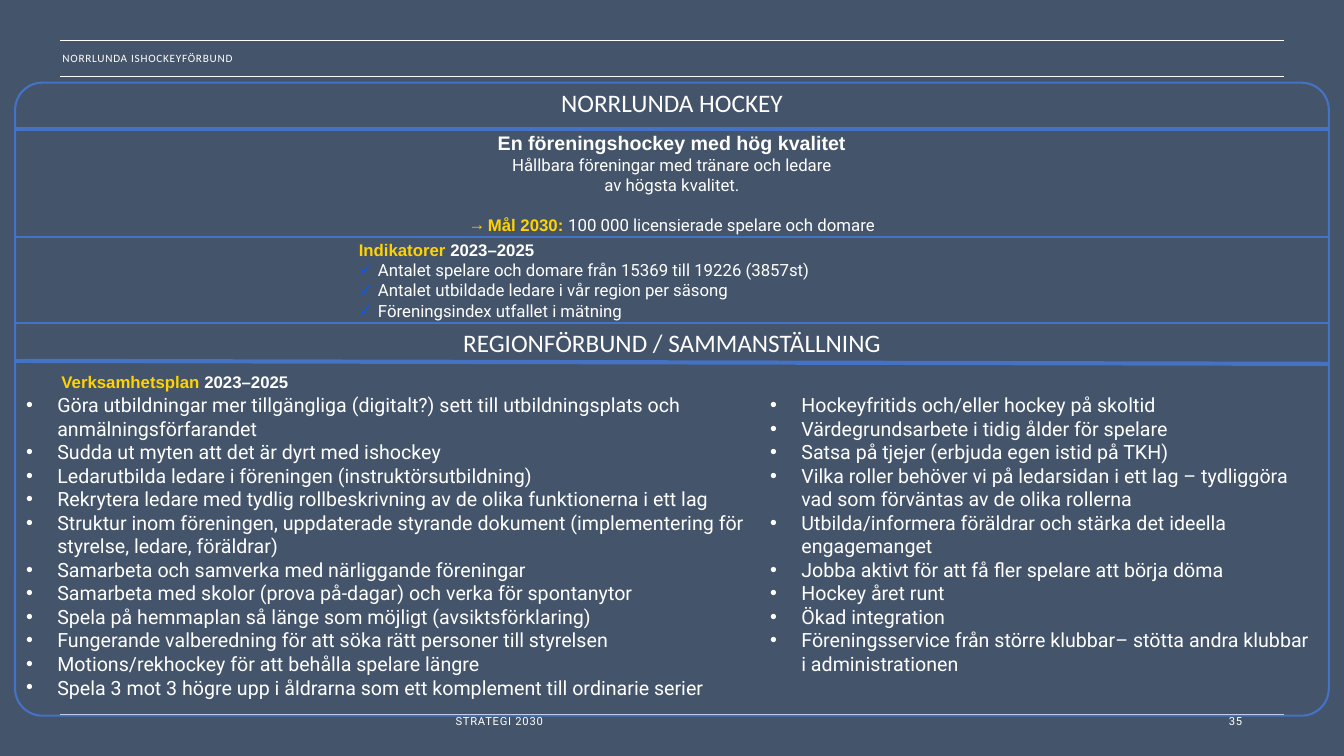
from dataclasses import dataclass

from lxml.etree import SubElement
from pptx import Presentation
from pptx.dml.color import RGBColor
from pptx.enum.shapes import MSO_CONNECTOR, MSO_SHAPE
from pptx.enum.text import MSO_ANCHOR, MSO_AUTO_SIZE, PP_ALIGN
from pptx.oxml.ns import qn
from pptx.slide import Slide
from pptx.util import Inches, Pt

COLORS = {
    "background": "44546A",
    "text": "FFFFFF",
    "frame": "4472C4",
    "accent": "FFD200",
    "check": "0F59EB",
}


@dataclass(frozen=True)
class Rule:
    start: tuple[float, float]
    end: tuple[float, float]
    color: str
    width: float


@dataclass(frozen=True)
class Span:
    text: str
    size: float = 12
    font: str = "Roboto"
    color: str = "text"
    bold: bool = False
    spacing: float = 0


@dataclass(frozen=True)
class Para:
    spans: tuple[Span, ...]
    align: PP_ALIGN = PP_ALIGN.LEFT
    bullet: str = ""
    bullet_color: str = ""
    indent: float = 0
    before: float = 0


MASTER_RULES = [Rule((0.6, y), (12.73, y), "text", 1) for y in (0.76, 0.4, 7.09)]
SECTION_RULES = [
    Rule((13.19, 3.61), (0.16, 3.58), "frame", 3),
    Rule((13.18, 1.28), (0.15, 1.28), "frame", 3),
    Rule((13.19, 3.2), (0.16, 3.2), "frame", 1.5),
    Rule((13.18, 2.35), (0.15, 2.35), "frame", 1.5),
]
INDICATORS = [
    "Antalet spelare och domare från 15369 till 19226 (3857st)",
    "Antalet utbildade ledare i vår region per säsong",
    "Föreningsindex utfallet i mätning",
]
PLAN_LEFT = [
    "Göra utbildningar mer tillgängliga (digitalt?) sett till utbildningsplats och anmälningsförfarandet",
    "Sudda ut myten att det är dyrt med ishockey",
    "Ledarutbilda ledare i föreningen (instruktörsutbildning)",
    "Rekrytera ledare med tydlig rollbeskrivning av de olika funktionerna i ett lag",
    "Struktur inom föreningen, uppdaterade styrande dokument (implementering för styrelse, ledare, föräldrar)",
    "Samarbeta och samverka med närliggande föreningar",
    "Samarbeta med skolor (prova på-dagar) och verka för spontanytor",
    "Spela på hemmaplan så länge som möjligt (avsiktsförklaring)",
    "Fungerande valberedning för att söka rätt personer till styrelsen",
    "Motions/rekhockey för att behålla spelare längre",
    "Spela 3 mot 3 högre upp i åldrarna som ett komplement till ordinarie serier",
]
PLAN_RIGHT = [
    "Hockeyfritids och/eller hockey på skoltid",
    "Värdegrundsarbete i tidig ålder för spelare",
    "Satsa på tjejer (erbjuda egen istid på TKH)",
    "Vilka roller behöver vi på ledarsidan i ett lag – tydliggöra vad som förväntas av de olika rollerna",
    "Utbilda/informera föräldrar och stärka det ideella engagemanget",
    "Jobba aktivt för att få fler spelare att börja döma",
    "Hockey året runt",
    "Ökad integration",
    "Föreningsservice från större klubbar– stötta andra klubbar i administrationen",
]


def rgb(name: str) -> RGBColor:
    return RGBColor.from_string(COLORS[name])


def draw_rule(slide: Slide, rule: Rule) -> None:
    ends = [Inches(value) for value in (*rule.start, *rule.end)]
    line = slide.shapes.add_connector(MSO_CONNECTOR.STRAIGHT, *ends)
    line.line.color.rgb = rgb(rule.color)
    line.line.width = Pt(rule.width)
    SubElement(line._element.spPr, qn("a:effectLst"))


def draw_frame(slide: Slide) -> None:
    box = [Inches(value) for value in (0.15, 0.82, 13.03, 6.28)]
    frame = slide.shapes.add_shape(MSO_SHAPE.ROUNDED_RECTANGLE, *box)
    frame.adjustments[0] = 0.043
    frame.shadow.inherit = False
    frame.fill.background()
    frame.line.color.rgb = rgb("frame")
    frame.line.width = Pt(1.5)


def fill_paragraph(paragraph, content: Para) -> None:
    paragraph.alignment = content.align
    paragraph.space_before = Pt(content.before)
    if content.bullet:
        props = paragraph._p.get_or_add_pPr()
        props.set("marL", str(Inches(content.indent)))
        props.set("indent", str(-Inches(content.indent)))
        if content.bullet_color:
            fill = SubElement(props, qn("a:buClr"))
            SubElement(fill, qn("a:srgbClr"), val=COLORS[content.bullet_color])
        SubElement(props, qn("a:buFont"), typeface="Arial")
        SubElement(props, qn("a:buChar"), char=content.bullet)
    for span in content.spans:
        for number, line in enumerate(span.text.split("\n")):
            if number:
                paragraph.add_line_break()
            run = paragraph.add_run()
            run.text = line
            run.font.size = Pt(span.size)
            run.font.name = span.font
            run.font.bold = span.bold
            run.font.color.rgb = rgb(span.color)
            if span.spacing:
                run._r.get_or_add_rPr().set("spc", str(round(span.spacing * 100)))


def add_text(slide: Slide, box: tuple[float, float, float, float], paras: list[Para], *,
             anchor: MSO_ANCHOR = MSO_ANCHOR.TOP, inset: bool = True, grow: bool = False) -> None:
    frame = slide.shapes.add_textbox(*[Inches(value) for value in box]).text_frame
    frame.word_wrap = True
    frame.vertical_anchor = anchor
    frame.auto_size = MSO_AUTO_SIZE.SHAPE_TO_FIT_TEXT if grow else MSO_AUTO_SIZE.NONE
    if not inset:
        frame.margin_left = frame.margin_right = frame.margin_top = frame.margin_bottom = 0
    for number, content in enumerate(paras):
        fill_paragraph(frame.add_paragraph() if number else frame.paragraphs[0], content)


def small_print(text: str, font: str = "Roboto", align: PP_ALIGN = PP_ALIGN.LEFT) -> list[Para]:
    return [Para((Span(text, 8, font, spacing=0.5),), align)]


def period_heading(title: str) -> Para:
    return Para((Span(f"{title} ", font="Arial", color="accent", bold=True),
                 Span("2023–2025", font="Arial", bold=True)))


def main() -> None:
    prs = Presentation()
    prs.slide_width, prs.slide_height = Inches(13.33), Inches(7.5)
    slide = prs.slides.add_slide(prs.slide_layouts[6])
    slide.background.fill.solid()
    slide.background.fill.fore_color.rgb = rgb("background")

    for rule in MASTER_RULES:
        draw_rule(slide, rule)
    middle = MSO_ANCHOR.MIDDLE
    add_text(slide, (0.62, 0.4, 3.36, 0.35),
             small_print("NORRLUNDA ISHOCKEYFÖRBUND", "Calibri"), anchor=middle, inset=False)
    add_text(slide, (4.42, 6.95, 4.5, 0.4), small_print("STRATEGI 2030"), anchor=middle)
    add_text(slide, (9.42, 6.95, 3, 0.4), small_print("35", align=PP_ALIGN.RIGHT), anchor=middle)

    draw_frame(slide)
    for rule in SECTION_RULES:
        draw_rule(slide, rule)
    center = PP_ALIGN.CENTER
    for top, title in ((0.82, "NORRLUNDA HOCKEY"), (3.2, "REGIONFÖRBUND / SAMMANSTÄLLNING")):
        add_text(slide, (3.33, top, 6.67, 0.4),
                 [Para((Span(title, 18, "Calibri"),), center)], grow=True)

    add_text(slide, (0.15, 1.25, 13.03, 1.35), [
        Para((Span("En föreningshockey med hög kvalitet", 14, "Arial", bold=True),), center),
        Para((Span("Hållbara föreningar med tränare och ledare\nav högsta kvalitet."),), center),
        Para((Span("Mål 2030: ", font="Arial", color="accent", bold=True),
              Span("100 000 licensierade spelare och domare")),
             center, "→", indent=0.19, before=14),
    ], grow=True)

    add_text(slide, (0.61, 3.69, 3.23, 2.81), [period_heading("Verksamhetsplan")], inset=False)
    add_text(slide, (3.46, 2.33, 4.78, 0.91), [
        period_heading("Indikatorer"),
        *(Para((Span(item),), bullet="✓", bullet_color="check", indent=0.19) for item in INDICATORS),
    ], grow=True)
    for box, items in (((0.16, 3.85, 7.41, 3.47), PLAN_LEFT), ((7.54, 3.85, 5.63, 3.15), PLAN_RIGHT)):
        add_text(slide, box,
                 [Para((Span(item, 14),), bullet="•", indent=0.31) for item in items], grow=True)

    prs.save("out.pptx")


if __name__ == "__main__":
    main()
